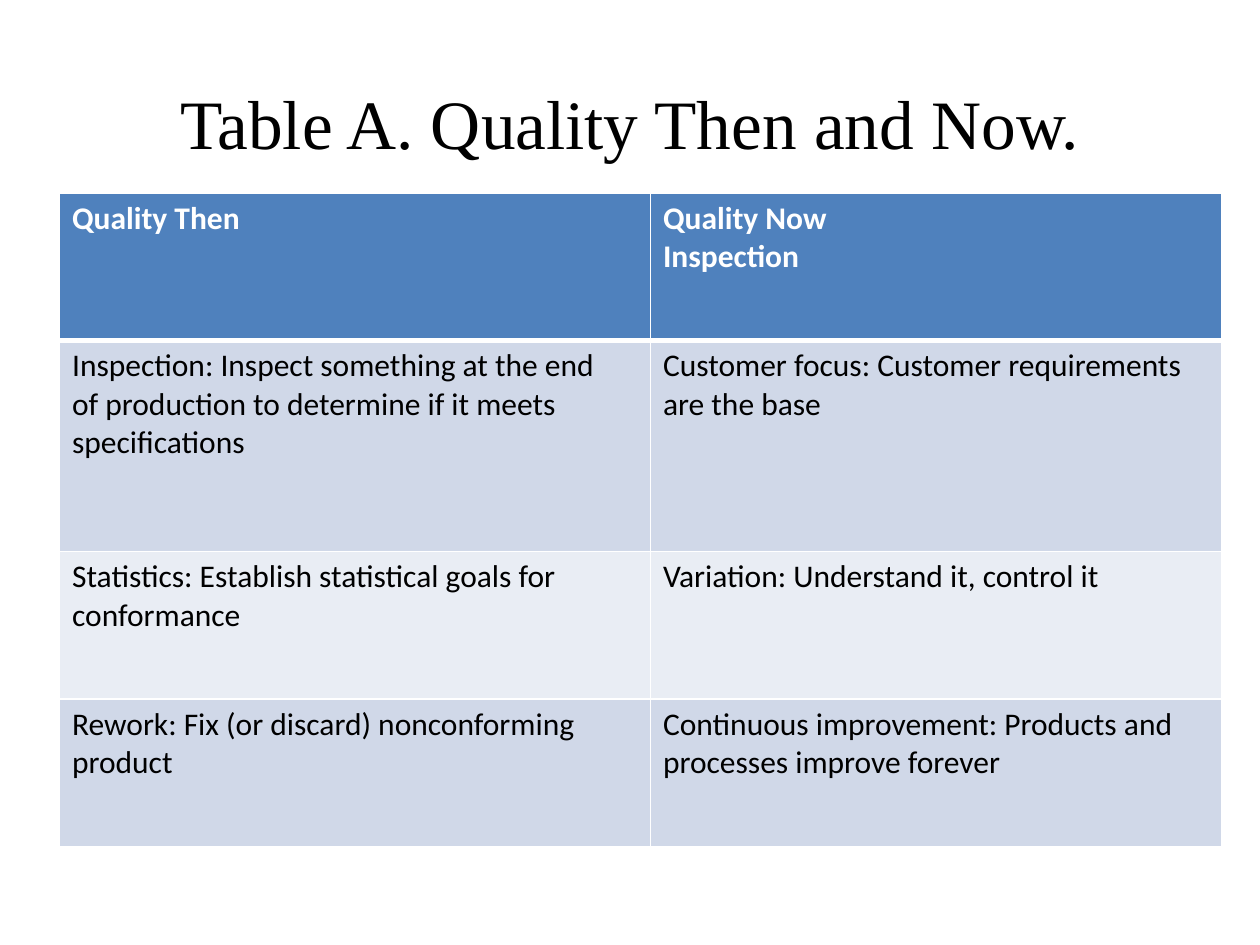
from lxml.etree import SubElement
from pptx import Presentation
from pptx.dml.color import RGBColor
from pptx.enum.text import MSO_ANCHOR, PP_ALIGN
from pptx.oxml.ns import qn
from pptx.util import Cm, Pt

BLACK = RGBColor(0x00, 0x00, 0x00)
WHITE = RGBColor(0xFF, 0xFF, 0xFF)
BLUE = RGBColor(0x4F, 0x81, 0xBD)
BAND_DARK = RGBColor(0xD0, 0xD8, 0xE8)
BAND_LIGHT = RGBColor(0xE9, 0xED, 0xF4)

ROWS = [
    ("Quality Then", "Quality Now\nInspection"),
    ("Inspection: Inspect something at the end\n"
     "of production to determine if it meets\nspecifications",
     "Customer focus: Customer requirements\nare the base"),
    ("Statistics: Establish statistical goals for\nconformance",
     "Variation: Understand it, control it"),
    ("Rework: Fix (or discard) nonconforming\nproduct",
     "Continuous improvement: Products and\nprocesses improve forever"),
]
COL_SHARES = [4.69, 4.53]
ROW_SHARES = [1.17, 1.67, 1.17, 1.17]


def format_text(tf, font, size, color, bold=False):
    for p in tf.paragraphs:
        for r in p.runs:
            r.font.name = font
            r.font.size = Pt(size)
            r.font.color.rgb = color
            r.font.bold = bold


def add_title(s, text, x, y, w, h):
    tf = s.shapes.add_textbox(x, y, w, h).text_frame
    tf.word_wrap = True
    tf.vertical_anchor = MSO_ANCHOR.MIDDLE
    tf.margin_top = Cm(0.33)
    tf.text = text
    tf.paragraphs[0].alignment = PP_ALIGN.CENTER
    format_text(tf, "Times New Roman", 39.6, BLACK)


def set_borders(cell, widths):
    tc_pr = cell._tc.get_or_add_tcPr()
    for side, width in zip("LRTB", widths):
        ln = SubElement(tc_pr, qn(f"a:ln{side}"), w=str(Pt(width)))
        fill = SubElement(ln, qn("a:solidFill"))
        SubElement(fill, qn("a:srgbClr"), val=str(WHITE))


def add_comparison(s, rows, x, y, w, h):
    table = s.shapes.add_table(len(rows), len(rows[0]), x, y, w, h).table
    for col, share in zip(table.columns, COL_SHARES):
        col.width = int(w * share / sum(COL_SHARES))
    for row, share in zip(table.rows, ROW_SHARES):
        row.height = int(h * share / sum(ROW_SHARES))
    for i, texts in enumerate(rows):
        header = i == 0
        band = BAND_DARK if i % 2 else BAND_LIGHT
        for j, text in enumerate(texts):
            cell = table.cell(i, j)
            set_borders(cell, (1, 1, 3 if i == 1 else 1, 3 if header else 1))
            cell.fill.solid()
            cell.fill.fore_color.rgb = BLUE if header else band
            cell.text_frame.text = text
            format_text(cell.text_frame, "Calibri", 18,
                        WHITE if header else BLACK, header)


def main():
    prs = Presentation()
    prs.slide_width, prs.slide_height = Cm(25.4), Cm(19.05)
    s = prs.slides.add_slide(prs.slide_layouts[6])
    add_title(s, "Table A. Quality Then and Now.",
              Cm(1.27), Cm(0.76), Cm(22.86), Cm(3.18))
    add_comparison(s, ROWS, Cm(1.2), Cm(3.89), Cm(23.42), Cm(13.18))
    prs.save("out.pptx")


if __name__ == "__main__":
    main()
